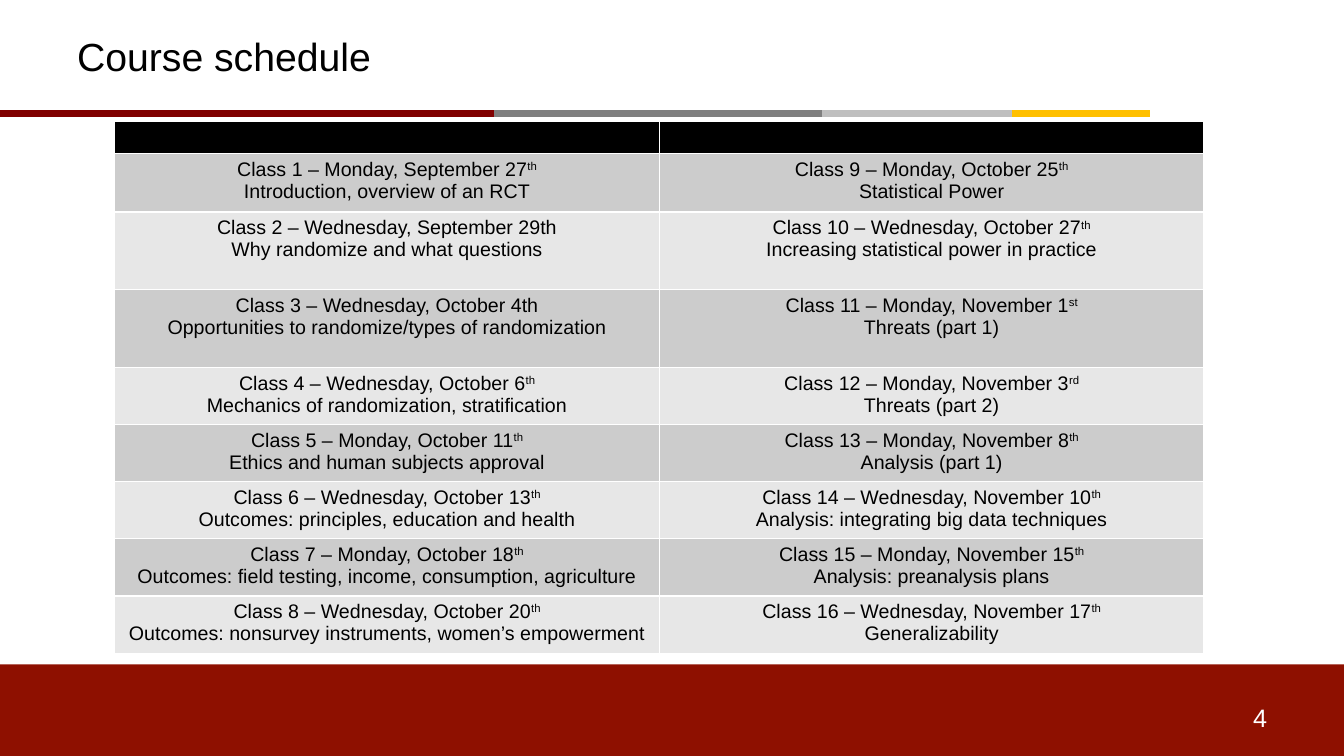
from dataclasses import dataclass
from itertools import pairwise

from pptx import Presentation
from pptx.dml.color import RGBColor
from pptx.enum.shapes import MSO_CONNECTOR, MSO_SHAPE
from pptx.enum.text import MSO_ANCHOR, PP_ALIGN
from pptx.oxml.ns import qn
from pptx.util import Pt

STRAIGHT = MSO_CONNECTOR.STRAIGHT
RECTANGLE = MSO_SHAPE.RECTANGLE
MIDDLE, TOP = MSO_ANCHOR.MIDDLE, MSO_ANCHOR.TOP
CENTER, LEFT = PP_ALIGN.CENTER, PP_ALIGN.LEFT


@dataclass(frozen=True)
class Theme:
    font: str = "Arial"
    title_size: int = 28
    number_size: int = 18
    table_size: int = 14
    header_size: int = 12
    black: str = "000000"
    white: str = "FFFFFF"
    footer: str = "8E1000"
    rule: tuple = ("800000", "7F7F7F", "BFBFBF", "FFC000")
    bands: tuple = ("CCCCCC", "E7E7E7")


THEME = Theme()

# A caret sets off the raised ordinal ending of a date
FIRST_HALF = [
    ("Class 1 – Monday, September 27^th", "Introduction, overview of an RCT"),
    ("Class 2 – Wednesday, September 29th", "Why randomize and what questions"),
    ("Class 3 – Wednesday, October 4th", "Opportunities to randomize/types of randomization"),
    ("Class 4 – Wednesday, October 6^th", "Mechanics of randomization, stratification"),
    ("Class 5 – Monday, October 11^th", "Ethics and human subjects approval"),
    ("Class 6 – Wednesday, October 13^th", "Outcomes: principles, education and health"),
    ("Class 7 – Monday, October 18^th", "Outcomes: field testing, income, consumption, agriculture"),
    ("Class 8 – Wednesday, October 20^th", "Outcomes: nonsurvey instruments, women’s empowerment"),
]
SECOND_HALF = [
    ("Class 9 – Monday, October 25^th", "Statistical Power"),
    ("Class 10 – Wednesday, October 27^th", "Increasing statistical power in practice"),
    ("Class 11 – Monday, November 1^st", "Threats (part 1)"),
    ("Class 12 – Monday, November 3^rd", "Threats (part 2)"),
    ("Class 13 – Monday, November 8^th", "Analysis (part 1)"),
    ("Class 14 – Wednesday, November 10^th", "Analysis: integrating big data techniques"),
    ("Class 15 – Monday, November 15^th", "Analysis: preanalysis plans"),
    ("Class 16 – Wednesday, November 17^th", "Generalizability"),
]
ROW_HEIGHTS = [23, 42, 55.4, 55.4] + [39] * 5
RULE_STOPS = [0, 353, 587.5, 723, 821.5]


def color(value):
    return RGBColor.from_string(value)


def style_paragraph(paragraph, size, ink, alignment=LEFT):
    paragraph.alignment = alignment
    font = paragraph.font
    font.name, font.size = THEME.font, Pt(size)
    font.color.rgb = color(ink)


def add_text(slide, text, left, top, width, height, size, ink, anchor=TOP):
    frame = slide.shapes.add_textbox(Pt(left), Pt(top), Pt(width), Pt(height)).text_frame
    frame.word_wrap = True
    frame.vertical_anchor = anchor
    frame.text = text
    style_paragraph(frame.paragraphs[0], size, ink)


def add_footer_band(slide):
    band = slide.shapes.add_shape(RECTANGLE, Pt(0), Pt(474.5), Pt(960), Pt(65.5))
    band.shadow.inherit = False
    band.fill.solid()
    band.fill.fore_color.rgb = color(THEME.footer)
    band.line.fill.background()


def add_rule(slide, top):
    for (start, end), ink in zip(pairwise(RULE_STOPS), THEME.rule):
        segment = slide.shapes.add_connector(STRAIGHT, Pt(start), Pt(top), Pt(end), Pt(top))
        segment.line.color.rgb = color(ink)
        segment.line.width = Pt(5.5)
        properties = segment._element.spPr
        properties.append(properties.makeelement(qn("a:effectLst"), {}))


def fill_cell(cell, fill):
    cell.fill.solid()
    cell.fill.fore_color.rgb = color(fill)


def write_class(cell, date, topic):
    frame = cell.text_frame
    day, _, ordinal = date.partition("^")
    date_line = frame.paragraphs[0]
    date_line.add_run().text = day
    if ordinal:
        raised = date_line.add_run()
        raised.text = ordinal
        raised.font._element.set("baseline", "30000")
    frame.add_paragraph().text = topic
    for paragraph in frame.paragraphs:
        style_paragraph(paragraph, THEME.table_size, THEME.black, CENTER)


def add_schedule(slide):
    frame = slide.shapes.add_table(len(ROW_HEIGHTS), 2, Pt(82), Pt(86.5),
                                   Pt(778), Pt(sum(ROW_HEIGHTS)))
    table = frame.table
    for row, height in zip(table.rows, ROW_HEIGHTS):
        row.height = Pt(height)

    # Empty header row, kept low by a small type size
    for cell in table.rows[0].cells:
        fill_cell(cell, THEME.black)
        end_mark = cell.text_frame.paragraphs[0]._p.get_or_add_endParaRPr()
        end_mark.set("sz", str(THEME.header_size * 100))

    # Classes run down the left column, then the right
    for column, classes in enumerate((FIRST_HALF, SECOND_HALF)):
        for index, (date, topic) in enumerate(classes):
            cell = table.cell(index + 1, column)
            fill_cell(cell, THEME.bands[index % 2])
            write_class(cell, date, topic)


def main():
    presentation = Presentation()
    presentation.slide_width, presentation.slide_height = Pt(960), Pt(540)
    slide = presentation.slides.add_slide(presentation.slide_layouts[6])

    # Frame of the slide
    add_footer_band(slide)
    add_rule(slide, 81)
    add_text(slide, "4", 888, 498, 46, 29, THEME.number_size, THEME.white)

    # Content
    add_text(slide, "Course schedule", 48, 3, 864, 74, THEME.title_size, THEME.black, MIDDLE)
    add_schedule(slide)

    presentation.save("out.pptx")


if __name__ == "__main__":
    main()
